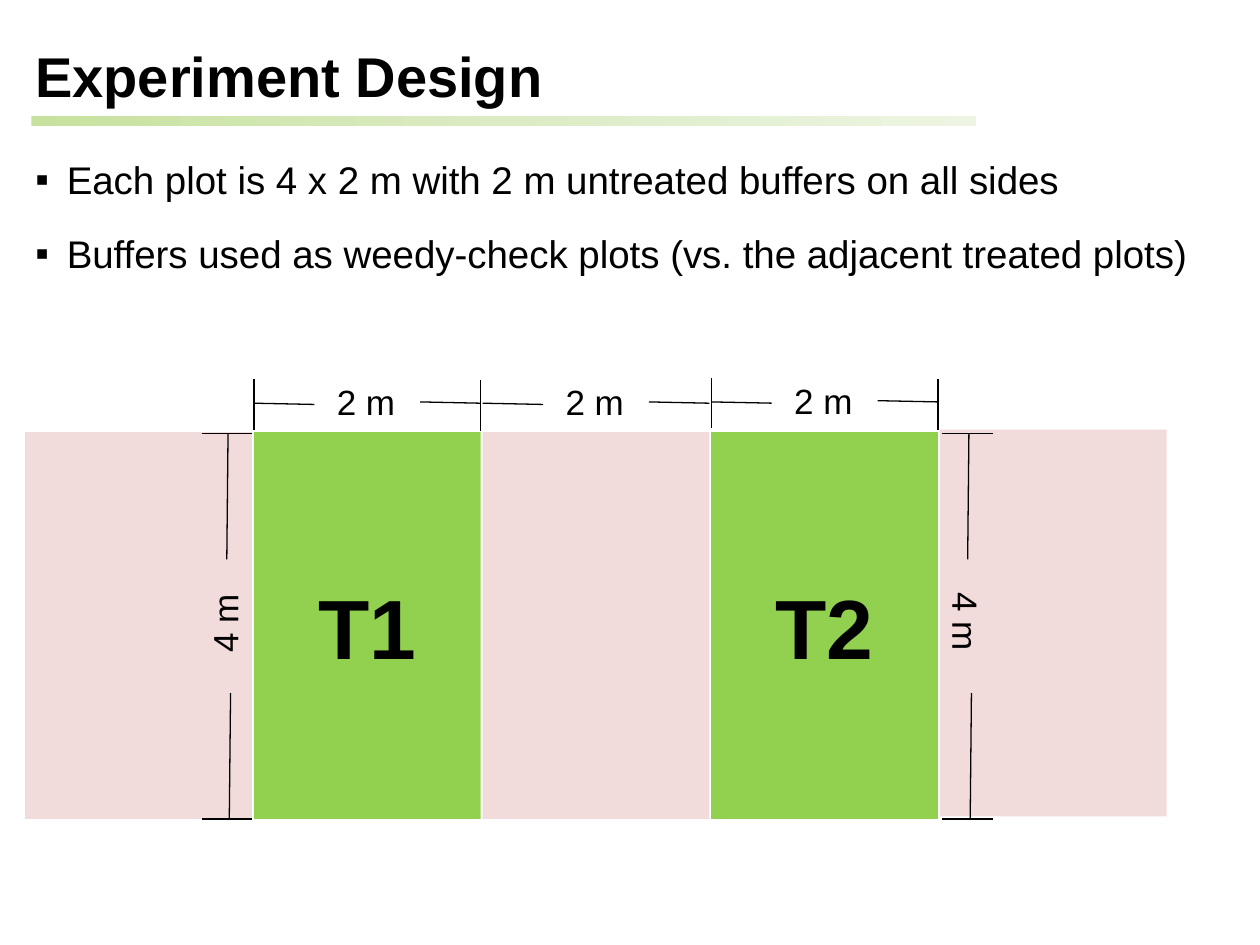
from copy import deepcopy

from lxml.etree import SubElement
from pptx import Presentation
from pptx.dml.color import RGBColor
from pptx.enum.shapes import MSO_CONNECTOR, MSO_SHAPE
from pptx.enum.text import MSO_ANCHOR, MSO_AUTO_SIZE, PP_ALIGN
from pptx.oxml.ns import qn
from pptx.util import Inches, Pt

BLACK = RGBColor(0x00, 0x00, 0x00)
BUFFER_PINK = RGBColor(0xF2, 0xDC, 0xDB)
PLOT_GREEN = RGBColor(0x92, 0xD0, 0x50)
RULE_GREENS = [RGBColor(0xC7, 0xE2, 0x9E), RGBColor(0xDB, 0xEB, 0xC4), RGBColor(0xED, 0xF5, 0xE2)]

HEADING = "Experiment Design"
POINTS = [
    "Each plot is 4 x 2 m with 2 m untreated buffers on all sides",
    "Buffers used as weedy-check plots (vs. the adjacent treated plots)",
]
STRIPS = ["", "T1", "", "T2", ""]
STRIP_TOPS = [3.43, 3.43, 3.43, 3.43, 3.41]
WIDTHS = [(1, "2 m", 3.2), (2, "2 m", 3.2), (3, "2 m", 3.19)]
HEIGHTS = [(1.6, "4 m", 270), (7.48, "4 m", 90)]

STRIP_LEFT, STRIP_PITCH = 0.2, 1.815
STRIP_WIDTH, STRIP_HEIGHT = 1.8, 3.07
STRIP_TOP, STRIP_BOTTOM = 3.44, 6.5
TICK, LABEL_WIDTH, LABEL_HEIGHT = 0.4, 0.67, 0.44

TITLE_FONT = {"name": "Arial", "size": Pt(32), "bold": True}
POINT_FONT = {"name": "Arial", "size": Pt(22), "bold": False}
PLOT_FONT = {"name": "Arial", "size": Pt(48), "bold": True}
LABEL_FONT = {"name": "Arial", "size": Pt(20), "bold": False}
POINT_SPACING = {"line_spacing": 1.14, "space_before": Pt(12), "alignment": PP_ALIGN.LEFT}


def apply(target, values):
    for key, value in values.items():
        setattr(target, key, value)


def write(paragraph, text, font):
    run = paragraph.add_run()
    run.text = text
    apply(run.font, font)
    run.font.color.rgb = BLACK


def place(shape, left, top, width, height):
    apply(shape, {"left": Inches(left), "top": Inches(top),
                  "width": Inches(width), "height": Inches(height)})


def add_block(slide, left, top, width, height):
    block = slide.shapes.add_shape(MSO_SHAPE.RECTANGLE, Inches(left), Inches(top),
                                   Inches(width), Inches(height))
    block.shadow.inherit = False
    block.line.fill.background()
    return block


def add_line(group, *ends):
    line = group.shapes.add_connector(MSO_CONNECTOR.STRAIGHT, *map(Inches, ends))
    line.line.color.rgb = BLACK
    line.line.width = Pt(0.75)
    SubElement(line._element.spPr, qn("a:effectLst"))


def add_label(group, text, left, top, rotation=0):
    label = group.shapes.add_textbox(Inches(left), Inches(top),
                                     Inches(LABEL_WIDTH), Inches(LABEL_HEIGHT))
    label.rotation = rotation
    label.text_frame.word_wrap = False
    write(label.text_frame.paragraphs[0], text, LABEL_FONT)


def add_heading(slide):
    title = slide.shapes.title
    place(title, 0.18, 0.28, 9.35, 0.64)
    apply(title.text_frame, {"vertical_anchor": MSO_ANCHOR.TOP, "word_wrap": True,
                             "auto_size": MSO_AUTO_SIZE.NONE})
    title.text_frame.paragraphs[0].alignment = PP_ALIGN.LEFT
    write(title.text_frame.paragraphs[0], HEADING, TITLE_FONT)

    rule = add_block(slide, 0.25, 0.92, 7.5, 0.08)
    rule.fill.gradient()
    rule.fill.gradient_angle = 0
    stops = rule._element.spPr.find(qn("a:gradFill")).find(qn("a:gsLst"))
    stops.insert(1, deepcopy(stops[0]))
    for index, (stop, color) in enumerate(zip(rule.fill.gradient_stops, RULE_GREENS)):
        stop.position = index / 2
        stop.color.rgb = color


def add_points(slide):
    body = slide.placeholders[1]
    place(body, 0.12, 1.14, 9.64, 1.08)
    apply(body.text_frame, {"word_wrap": True, "auto_size": MSO_AUTO_SIZE.NONE})
    for index, point in enumerate(POINTS):
        paragraph = body.text_frame.add_paragraph() if index else body.text_frame.paragraphs[0]
        apply(paragraph, POINT_SPACING)
        properties = paragraph._p.get_or_add_pPr()
        properties.set("marL", str(Inches(0.31)))
        properties.set("indent", str(Inches(-0.25)))
        SubElement(properties, qn("a:buFont"), typeface="Arial")
        SubElement(properties, qn("a:buChar"), char="▪")
        write(paragraph, point, POINT_FONT)


def add_strips(slide):
    for column, (treatment, top) in enumerate(zip(STRIPS, STRIP_TOPS)):
        strip = add_block(slide, STRIP_LEFT + column * STRIP_PITCH, top, STRIP_WIDTH, STRIP_HEIGHT)
        strip.fill.solid()
        strip.fill.fore_color.rgb = PLOT_GREEN if treatment else BUFFER_PINK
        if treatment:
            strip.text_frame.vertical_anchor = MSO_ANCHOR.MIDDLE
            strip.text_frame.paragraphs[0].alignment = PP_ALIGN.CENTER
            write(strip.text_frame.paragraphs[0], treatment, PLOT_FONT)


def add_widths(slide):
    for column, text, y in WIDTHS:
        group = slide.shapes.add_group_shape()
        left = STRIP_LEFT + column * STRIP_PITCH
        right = left + STRIP_WIDTH
        add_line(group, left, y, left + 0.48, y + 0.01)
        add_line(group, right - 0.48, y - 0.01, right, y)
        if STRIPS[column]:
            add_line(group, left, y + 0.21, left, y + 0.21 - TICK)
            add_line(group, right, y + 0.22, right, y + 0.22 - TICK)
        add_label(group, text, left + 0.56, y - 0.23)


def add_heights(slide):
    for left, text, rotation in HEIGHTS:
        group = slide.shapes.add_group_shape()
        for y in (STRIP_TOP, STRIP_BOTTOM):
            add_line(group, left, y, left + TICK, y)
        add_line(group, left + 0.21, STRIP_TOP, left + 0.2, STRIP_TOP + 1)
        add_line(group, left + 0.23, STRIP_BOTTOM - 1, left + 0.22, STRIP_BOTTOM)
        add_label(group, text, left - 0.15, 4.72, rotation)


def main():
    deck = Presentation()
    apply(deck, {"slide_width": Inches(10), "slide_height": Inches(7.5)})
    slide = deck.slides.add_slide(deck.slide_layouts[1])
    for add_part in (add_heading, add_points, add_strips, add_widths, add_heights):
        add_part(slide)
    deck.save("out.pptx")


if __name__ == "__main__":
    main()
